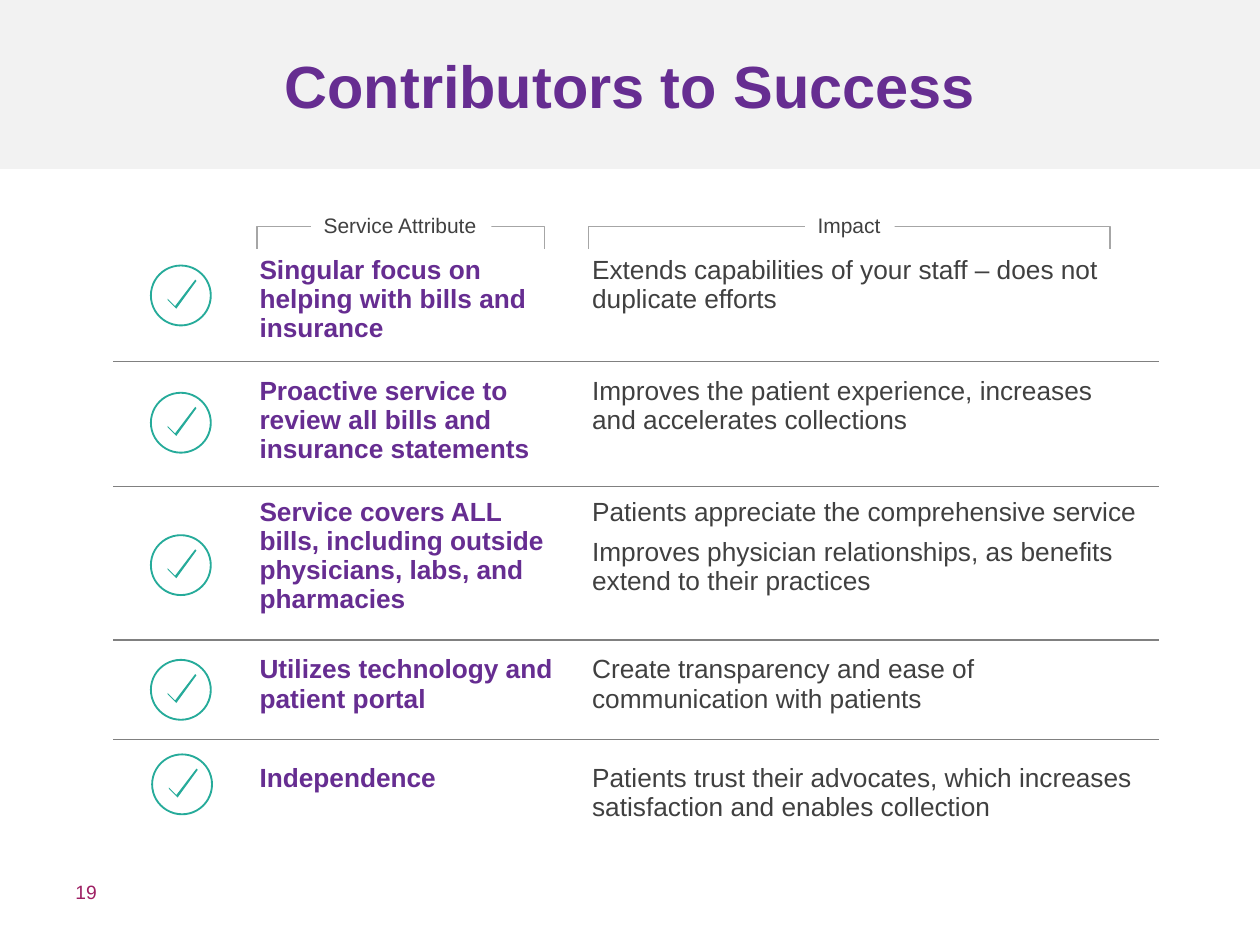
from lxml.etree import SubElement
from pptx import Presentation
from pptx.dml.color import RGBColor
from pptx.enum.shapes import MSO_CONNECTOR, MSO_SHAPE
from pptx.enum.text import MSO_ANCHOR, PP_ALIGN
from pptx.oxml.ns import qn
from pptx.util import Inches, Pt

PURPLE = RGBColor(0x66, 0x2D, 0x91)
TEAL = RGBColor(0x26, 0xAB, 0x9A)
MAGENTA = RGBColor(0x9E, 0x1F, 0x63)
DARK = RGBColor(0x40, 0x40, 0x40)
RULE_GRAY = RGBColor(0x80, 0x80, 0x80)
BRACKET_GRAY = RGBColor(0xA6, 0xA6, 0xA6)
BAND_GRAY = RGBColor(0xF2, 0xF2, 0xF2)
WHITE = RGBColor(0xFF, 0xFF, 0xFF)

CONTRIBUTORS = [
    ("Singular focus on helping with bills and insurance",
     ["Extends capabilities of your staff – does not duplicate efforts"]),
    ("Proactive service to review all bills and insurance statements",
     ["Improves the patient experience, increases and accelerates collections"]),
    ("Service covers ALL bills, including outside physicians, labs, and pharmacies",
     ["Patients appreciate the comprehensive service",
      "Improves physician relationships, as benefits extend to their practices"]),
    ("Utilizes technology and patient portal",
     ["Create transparency and ease of communication with patients"]),
    ("Independence",
     ["Patients trust their advocates, which increases satisfaction and enables collection"]),
]
COLUMN_WIDTHS = [2.64, 4.56]
ROW_HEIGHTS = [0.96, 0.96, 1.25, 0.86, 0.86]
CHECK_POSITIONS = [(1.19, 2.1), (1.19, 3.11), (1.19, 4.24), (1.19, 5.23), (1.2, 5.98)]
RULE_TOPS = [2.87, 3.86, 5.08, 5.87]
BRACKETS = [(2.04, 2.28), (4.67, 4.14)]
HEADINGS = [("Service Attribute", 2.47, 1.43), ("Impact", 6.39, 0.71)]
CHECK_SIZE = 0.49
TICK = [(0.21, 0.35), (0.14, 0.28), (0.14, 0.27), (0.2, 0.33), (0.36, 0.12), (0.37, 0.13)]


class SlideBuilder:
    font_name = "Arial"

    def __init__(self, page):
        self.page = page

    def paint(self, shape, fill=None, line=None):
        shape.shadow.inherit = False
        if fill is None:
            shape.fill.background()
        else:
            shape.fill.solid()
            shape.fill.fore_color.rgb = fill
        if line is None:
            shape.line.fill.background()
        else:
            shape.line.color.rgb = line
            shape.line.width = Pt(0.75)
        return shape

    def add_text(self, frame, texts, size, color, bold=False, align=PP_ALIGN.LEFT, after=0):
        for index, text in enumerate(texts):
            para = frame.add_paragraph() if index else frame.paragraphs[0]
            para.alignment = align
            para.space_after = Pt(after)
            span = para.add_run()
            span.text = text
            span.font.name = self.font_name
            span.font.size = Pt(size)
            span.font.bold = bold
            span.font.color.rgb = color

    def rectangle(self, left, top, width, height, fill=None, line=None):
        box = self.page.shapes.add_shape(
            MSO_SHAPE.RECTANGLE, Inches(left), Inches(top), Inches(width), Inches(height))
        return self.paint(box, fill, line)

    def label(self, left, top, width, height, text, size, color, anchor, **style):
        box = self.page.shapes.add_textbox(
            Inches(left), Inches(top), Inches(width), Inches(height))
        box.text_frame.word_wrap = True
        box.text_frame.vertical_anchor = anchor
        self.add_text(box.text_frame, [text], size, color, **style)

    def heading(self, text, left, width):
        """Column heading whose white box interrupts the bracket behind it."""
        box = self.rectangle(left, 1.64, width, 0.3, fill=WHITE)
        box.text_frame.word_wrap = False
        box.text_frame.vertical_anchor = MSO_ANCHOR.TOP
        self.add_text(box.text_frame, [text], 12, DARK, after=6)

    def table(self, left, top, rows):
        table = self.page.shapes.add_table(
            len(rows), len(COLUMN_WIDTHS), Inches(left), Inches(top),
            Inches(sum(COLUMN_WIDTHS)), Inches(sum(ROW_HEIGHTS))).table
        table.first_row = False
        table.horz_banding = False
        for column, width in zip(table.columns, COLUMN_WIDTHS):
            column.width = Inches(width)
        for row, height, (attribute, impacts) in zip(table.rows, ROW_HEIGHTS, rows):
            row.height = Inches(height)
            for cell in row.cells:
                cell.fill.background()
            self.add_text(row.cells[0].text_frame, [attribute], 15, PURPLE, bold=True, after=6)
            self.add_text(row.cells[1].text_frame, impacts, 15, DARK, after=6)

    def check(self, left, top):
        """Thin ring with a tick inside."""
        ring = self.page.shapes.add_shape(
            MSO_SHAPE.DONUT, Inches(left), Inches(top), Inches(CHECK_SIZE), Inches(CHECK_SIZE))
        ring.adjustments[0] = 0.03
        self.paint(ring, TEAL)
        points = [(Inches(left + x), Inches(top + y)) for x, y in TICK]
        builder = self.page.shapes.build_freeform(*points[0])
        builder.add_line_segments(points[1:], close=True)
        self.paint(builder.convert_to_shape(), TEAL)

    def rule(self, top):
        line = self.page.shapes.add_connector(
            MSO_CONNECTOR.STRAIGHT, Inches(0.9), Inches(top), Inches(9.2), Inches(top))
        line.line.color.rgb = RULE_GRAY
        line.line.width = Pt(0.75)
        SubElement(line._element.spPr, qn("a:effectLst"))


def main():
    deck = Presentation()
    deck.slide_width = Inches(10)
    deck.slide_height = Inches(7.5)
    slide = SlideBuilder(deck.slides.add_slide(deck.slide_layouts[6]))

    for left, width in BRACKETS:
        slide.rectangle(left, 1.8, width, 0.18, line=BRACKET_GRAY)
    slide.table(1.96, 1.98, CONTRIBUTORS)
    slide.rectangle(0, 0, 10, 1.34, fill=BAND_GRAY)
    slide.label(0, 0, 10, 1.34, "Contributors to Success", 34, PURPLE,
                MSO_ANCHOR.MIDDLE, bold=True, align=PP_ALIGN.CENTER)
    for left, top in CHECK_POSITIONS:
        slide.check(left, top)
    for top in RULE_TOPS:
        slide.rule(top)
    for text, left, width in HEADINGS:
        slide.heading(text, left, width)
    slide.label(0.5, 7, 0.63, 0.22, "19", 11, MAGENTA, MSO_ANCHOR.BOTTOM)

    deck.save("out.pptx")


if __name__ == "__main__":
    main()
